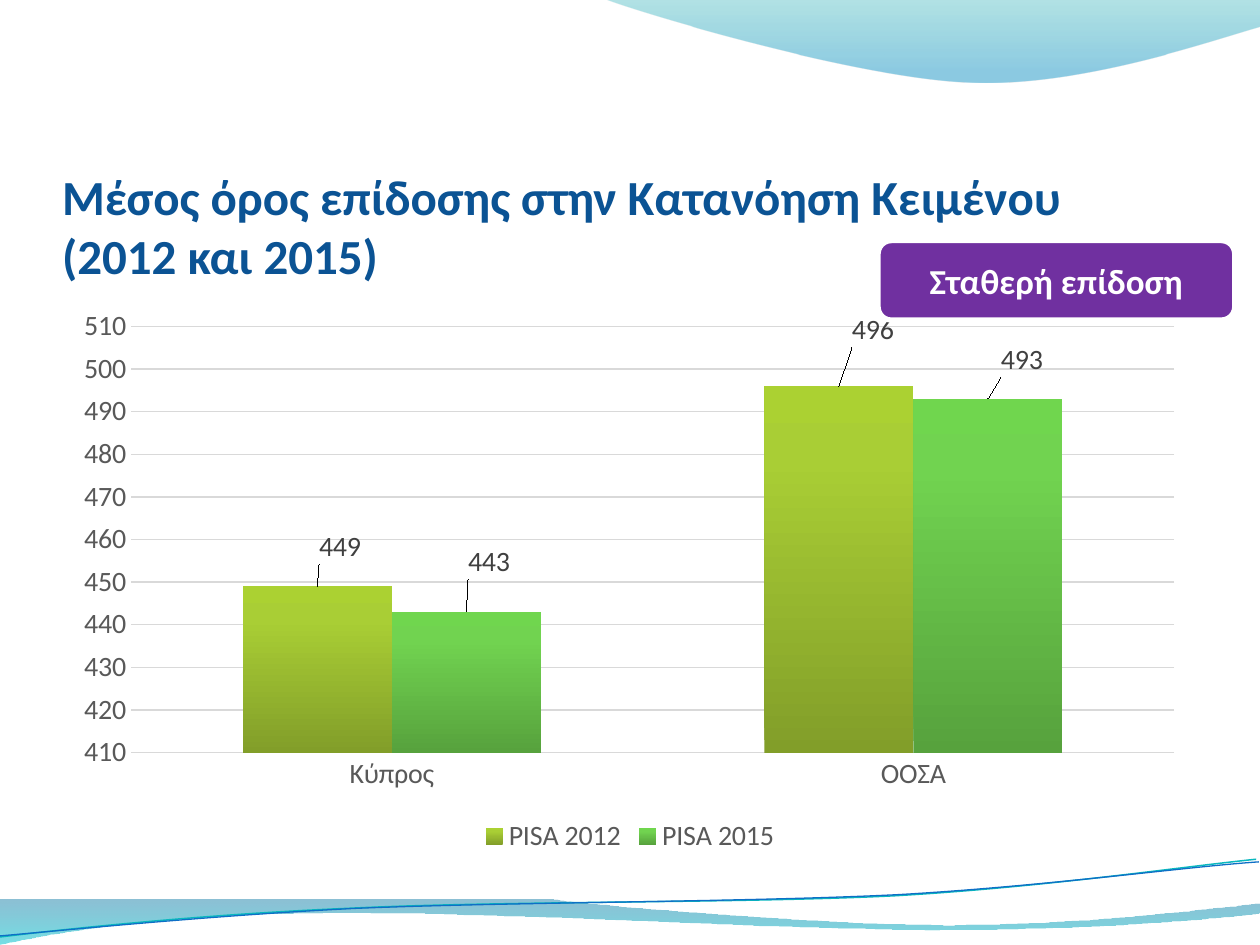
import lxml.etree
import pptx
import pptx.chart.data
import pptx.dml.color
import pptx.enum.chart
import pptx.enum.shapes
import pptx.enum.text
import pptx.oxml
import pptx.oxml.ns
import pptx.util

Pt = pptx.util.Pt
RGB = pptx.dml.color.RGBColor
qn = pptx.oxml.ns.qn

FONT = "Calibri"
TITLE_BLUE = RGB(0x0B, 0x53, 0x94)
WHITE = RGB(0xFF, 0xFF, 0xFF)
PURPLE = RGB(0x70, 0x30, 0xA0)
TEAL_LINE = RGB(0x0A, 0xB8, 0xBF)
BLUE_LINE = RGB(0x0F, 0x6F, 0xC6)
AXIS_GRAY = RGB(0x59, 0x59, 0x59)
LABEL_GRAY = RGB(0x40, 0x40, 0x40)
GRID_GRAY = RGB(0xD9, 0xD9, 0xD9)
# Gradient stops: position %, colour, opacity %
BOTTOM_STOPS = [(0, RGB(0x00, 0x74, 0xA1), 45), (100, RGB(0x00, 0xC6, 0xCF), 55)]
TOP_STOPS = [(0, RGB(0x00, 0xA1, 0xA9), 30), (80, RGB(0x00, 0x8B, 0xBF), 45)]
OLIVE_STOPS = [(0, RGB(0x82, 0x9E, 0x29), 100), (80, RGB(0xA9, 0xCE, 0x35), 100),
               (100, RGB(0xAB, 0xD1, 0x32), 100)]
GREEN_STOPS = [(0, RGB(0x57, 0xA2, 0x3D), 100), (80, RGB(0x71, 0xD3, 0x50), 100),
               (100, RGB(0x70, 0xD6, 0x4E), 100)]


def set_text(tf, text, size, color, align, anchor):
    tf.word_wrap = True
    tf.auto_size = pptx.enum.text.MSO_AUTO_SIZE.NONE
    tf.vertical_anchor = anchor
    p = tf.paragraphs[0]
    p.text = text
    p.alignment = align
    for r in p.runs:
        r.font.name, r.font.size, r.font.bold = FONT, Pt(size), True
        r.font.color.rgb = color


def set_gradient(fill, element, stops, angle):
    """Fill with any number of stops; angle runs counter-clockwise."""
    fill.gradient()
    fill.gradient_angle = angle
    stop_list = next(element.iter(qn("a:gsLst")))
    for old in list(stop_list):
        stop_list.remove(old)
    for position, color, opacity in stops:
        stop = lxml.etree.SubElement(stop_list, qn("a:gs"), pos=str(position * 1000))
        clr = lxml.etree.SubElement(stop, qn("a:srgbClr"), val=str(color))
        if opacity < 100:
            lxml.etree.SubElement(clr, qn("a:alpha"), val=str(opacity * 1000))


prs = pptx.Presentation()
prs.slide_width, prs.slide_height = Pt(720), Pt(540)
slide = prs.slides.add_slide(prs.slide_layouts[5])

# Decorative bands and waves: start point, then lines (2 numbers) and Bézier curves (6)
bottom_band = [(-0.7, 514.1), (316.1, 514.1), (342, 517.7, 476.6, 528.5, 545, 528.5),
               (613.4, 528.5, 689, 519.8, 719.3, 516.2), (720, 522),
               (707, 524.2, 625.7, 531.4, 536.4, 531.4),
               (447.1, 531.4, 274.3, 520.6, 184.3, 522),
               (92.2, 522, 32.4, 532.8, -1.4, 540)]
top_band = [(344.9, -0.7), (366.5, 7.9, 491, 44.6, 553.7, 46.8),
            (616.3, 49.7, 691.9, 23, 720, 15.1), (720, 0)]
teal_wave = [(-2.2, 535.7), (33.1, 531.4, 112.3, 522.7, 198, 519.1),
             (283.7, 514.8, 424.1, 516.2, 511.2, 511.9),
             (597.6, 506.9, 674.6, 495.4, 717.8, 491)]
blue_wave = [(-2.2, 535), (32.4, 532.1, 116.6, 523.4, 203, 519.1),
             (288.7, 515.5, 427.7, 515.5, 514.1, 511.2),
             (599.8, 506.2, 676.8, 495.4, 719.3, 492.5)]
for outline, stops, line_color, line_width in (
        (bottom_band, BOTTOM_STOPS, None, 0), (top_band, TOP_STOPS, None, 0),
        (teal_wave, None, TEAL_LINE, 0.85), (blue_wave, None, BLUE_LINE, 0.75)):
    points = [(Pt(segment[i]), Pt(segment[i + 1]))
              for segment in outline for i in range(0, len(segment), 2)]
    builder = slide.shapes.build_freeform(*points[0])
    builder.add_line_segments(points[1:], close=stops is not None)
    s = builder.convert_to_shape()
    # Merge the three points of each curve into one Bézier segment
    lines = iter(list(s.element.iter(qn("a:lnTo"))))
    for segment in outline[1:]:
        first = next(lines)
        if len(segment) == 6:
            curve = lxml.etree.Element(qn("a:cubicBezTo"))
            first.addprevious(curve)
            for line in (first, next(lines), next(lines)):
                curve.append(line[0])
                line.getparent().remove(line)
    s.shadow.inherit = False
    if stops:
        set_gradient(s.fill, s.element, stops, 270)
        s.line.fill.background()
    else:
        s.fill.background()
        s.line.color.rgb, s.line.width = line_color, Pt(line_width)

title = slide.shapes.title
title.left, title.top, title.width, title.height = Pt(35.5), Pt(72.3), Pt(648), Pt(90)
tf = title.text_frame
tf.margin_left = tf.margin_right = tf.margin_bottom = 0
tf.margin_top = Pt(3.6)
set_text(tf, "Μέσος όρος επίδοσης στην Κατανόηση Κειμένου \v(2012 και 2015)",
         size=28, color=TITLE_BLUE, align=pptx.enum.text.PP_ALIGN.LEFT,
         anchor=pptx.enum.text.MSO_ANCHOR.BOTTOM)
title.element.getparent().append(title.element)

data = pptx.chart.data.CategoryChartData()
data.categories = ["Κύπρος", "ΟΟΣΑ"]
data.add_series("PISA 2012", (449, 496))
data.add_series("PISA 2015", (443, 493))
chart = slide.shapes.add_chart(
    pptx.enum.chart.XL_CHART_TYPE.COLUMN_CLUSTERED,
    Pt(36), Pt(170.6), Pt(648), Pt(320.4), data).chart
chart.has_title = False
chart.font.name, chart.font.size = FONT, Pt(16)
chart.font.color.rgb = AXIS_GRAY
chart.has_legend = True
chart.legend.position = pptx.enum.chart.XL_LEGEND_POSITION.BOTTOM
chart.legend.include_in_layout = False

value_axis, category_axis = chart.value_axis, chart.category_axis
value_axis.minimum_scale, value_axis.maximum_scale = 410, 510
value_axis.major_unit = 10
value_axis.format.line.fill.background()
value_axis.major_gridlines.format.line.color.rgb = GRID_GRAY
value_axis.major_gridlines.format.line.width = Pt(0.75)
category_axis.format.line.color.rgb = GRID_GRAY
category_axis.format.line.width = Pt(1)
for axis in (value_axis, category_axis):
    axis.major_tick_mark = pptx.enum.chart.XL_TICK_MARK.NONE
    axis.minor_tick_mark = pptx.enum.chart.XL_TICK_MARK.NONE

plot = chart.plots[0]
plot.gap_width, plot.overlap = 150, 0
plot.vary_by_categories = False

# Manual layouts: the plot area as (x, y, w, h), each label as an (x, y) offset
plot_area = next(chart.element.iter(qn("c:plotArea")))
for old in plot_area.findall(qn("c:layout")):
    plot_area.remove(old)
layouts = [(plot_area, 0, {"layoutTarget": "inner", "xMode": "edge", "yMode": "edge",
                           "x": 0.06, "y": 0.05, "w": 0.92, "h": 0.76})]
label_offsets = [[(0.02, -0.03), (0.03, -0.06)], [(0.02, -0.05), (0.03, -0.03)]]
NO_LEADER_LINES = (
    '<c:extLst xmlns:c="http://schemas.openxmlformats.org/drawingml/2006/chart">'
    '<c:ext uri="{CE6537A1-D6FC-4f65-9D91-7224C49458BB}"'
    ' xmlns:c15="http://schemas.microsoft.com/office/drawing/2012/chart">'
    '<c15:showLeaderLines val="0"/></c:ext></c:extLst>')
for series, stops, offsets in zip(plot.series, (OLIVE_STOPS, GREEN_STOPS), label_offsets):
    set_gradient(series.format.fill, series._element, stops, 90)
    series.invert_if_negative = False
    labels = series.data_labels
    labels.show_value = True
    labels.font.name, labels.font.size = FONT, Pt(16)
    labels.font.color.rgb = LABEL_GRAY
    for i, (x, y) in enumerate(offsets):
        label = series.points[i].data_label
        label.font.name, label.font.size = FONT, Pt(16)
        label.font.color.rgb = LABEL_GRAY
        label.position = pptx.enum.chart.XL_LABEL_POSITION.OUTSIDE_END
        layouts.append((series._element.findall(".//" + qn("c:dLbl"))[i], 1, {"x": x, "y": y}))
    label_list = series._element.find(qn("c:dLbls"))
    for old in label_list.findall(qn("c:showLeaderLines")):
        label_list.remove(old)
    label_list.append(pptx.oxml.parse_xml(NO_LEADER_LINES))
for parent, index, values in layouts:
    layout = lxml.etree.Element(qn("c:layout"))
    manual = lxml.etree.SubElement(layout, qn("c:manualLayout"))
    for tag, value in values.items():
        lxml.etree.SubElement(manual, qn("c:" + tag), val=str(value))
    parent.insert(index, layout)

badge = slide.shapes.add_shape(pptx.enum.shapes.MSO_SHAPE.ROUNDED_RECTANGLE,
                               Pt(501.8), Pt(137.5), Pt(203.8), Pt(45.4))
badge.fill.solid()
badge.fill.fore_color.rgb = PURPLE
badge.line.color.rgb, badge.line.width = WHITE, Pt(3)
badge.shadow.inherit = False
set_text(badge.text_frame, "Σταθερή επίδοση", size=20, color=WHITE,
         align=pptx.enum.text.PP_ALIGN.CENTER, anchor=pptx.enum.text.MSO_ANCHOR.MIDDLE)

prs.save("out.pptx")
